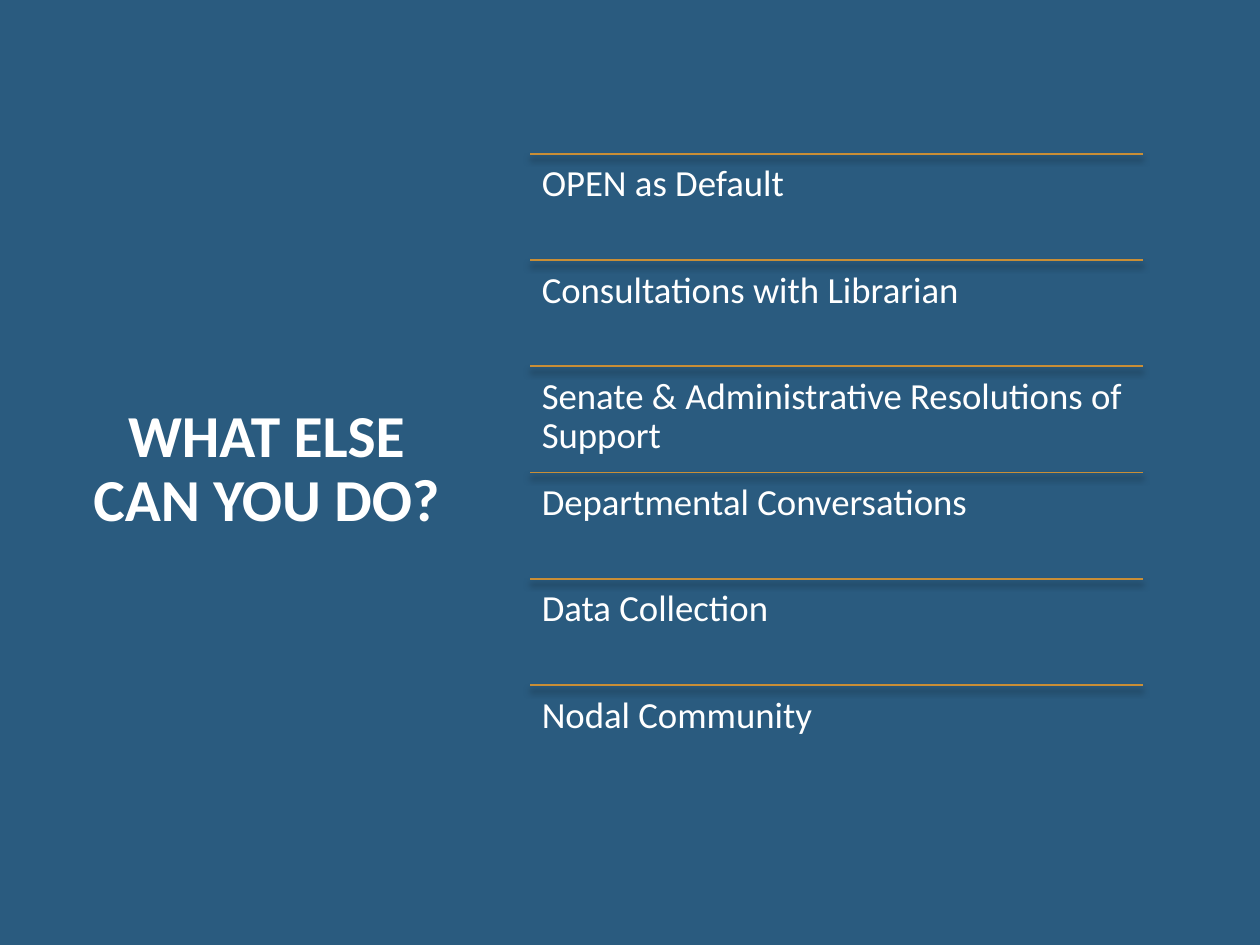
from lxml import etree
from pptx import Presentation
from pptx.dml.color import RGBColor
from pptx.enum.shapes import MSO_CONNECTOR
from pptx.enum.text import MSO_ANCHOR, PP_ALIGN
from pptx.oxml import parse_xml
from pptx.oxml.ns import nsdecls
from pptx.util import Inches, Pt

STRAIGHT = MSO_CONNECTOR.STRAIGHT
TOP, MIDDLE = MSO_ANCHOR.TOP, MSO_ANCHOR.MIDDLE
LEFT, CENTER = PP_ALIGN.LEFT, PP_ALIGN.CENTER

COLORS = {"background": "2A5B7F", "text": "FFFFFF", "rule": "C98E36", "shadow": "000000"}
FONT = "Calibri"
TITLE = "WHAT ELSE CAN YOU DO?"
ACTIONS = [
    "OPEN as Default",
    "Consultations with Librarian",
    "Senate & Administrative Resolutions of Support",
    "Departmental Conversations",
    "Data Collection",
    "Nodal Community",
]


def rgb(name):
    """Return the named palette colour."""
    return RGBColor.from_string(COLORS[name])


def add_text(shapes, box, text, size, bold=False, align=LEFT, anchor=TOP, inset=0.09):
    """Place one wrapped paragraph in a box given in inches."""
    tf = shapes.add_textbox(*map(Inches, box)).text_frame
    tf.word_wrap = True
    tf.vertical_anchor = anchor
    tf.margin_left = tf.margin_right = tf.margin_top = tf.margin_bottom = Inches(inset)
    tf.text = text
    p = tf.paragraphs[0]
    p.alignment, p.line_spacing = align, 0.9
    font = p.runs[0].font
    font.name, font.size, font.bold = FONT, Pt(size), bold
    font.color.rgb = rgb("text")


def add_rule(shapes, left, top, width):
    """Draw a horizontal rule with a soft shadow below it."""
    line = shapes.add_connector(
        STRAIGHT, Inches(left), Inches(top), Inches(left + width), Inches(top))
    line.line.color.rgb = rgb("rule")
    line.line.width = Pt(1)
    effects = parse_xml(f"<a:effectLst {nsdecls('a')}/>")
    shadow = etree.SubElement(
        effects, effects.tag.replace("effectLst", "outerShdw"),
        blurRad=str(Pt(4)), dist=str(Pt(3)), dir="5400000", rotWithShape="0")
    color = etree.SubElement(
        shadow, effects.tag.replace("effectLst", "srgbClr"), val=COLORS["shadow"])
    etree.SubElement(color, effects.tag.replace("effectLst", "alpha"), val="54000")
    line._element.spPr.append(effects)


def add_title(shapes, box):
    """Centre the slide title in its box."""
    add_text(shapes, box, TITLE, 34, bold=True, align=CENTER, anchor=MIDDLE, inset=0.1)


def add_action_list(shapes, box):
    """Divide the box into equal rows, each a rule with its text."""
    left, top, width, height = box
    row = height / len(ACTIONS)
    group = shapes.add_group_shape().shapes
    for i, action in enumerate(ACTIONS):
        y = top + i * row
        add_rule(group, left, y, width)
        add_text(group, (left, y, width, row), action, 21)


def main():
    """Build and save the slide."""
    prs = Presentation()
    prs.slide_width, prs.slide_height = Inches(10), Inches(7.5)
    s = prs.slides.add_slide(prs.slide_layouts[6])
    s.background.fill.solid()
    s.background.fill.fore_color.rgb = rgb("background")
    add_title(s.shapes, (0.62, 0.67, 2.99, 6.13))
    add_action_list(s.shapes, (4.21, 1.22, 4.86, 5.06))
    prs.save("out.pptx")


if __name__ == "__main__":
    main()
